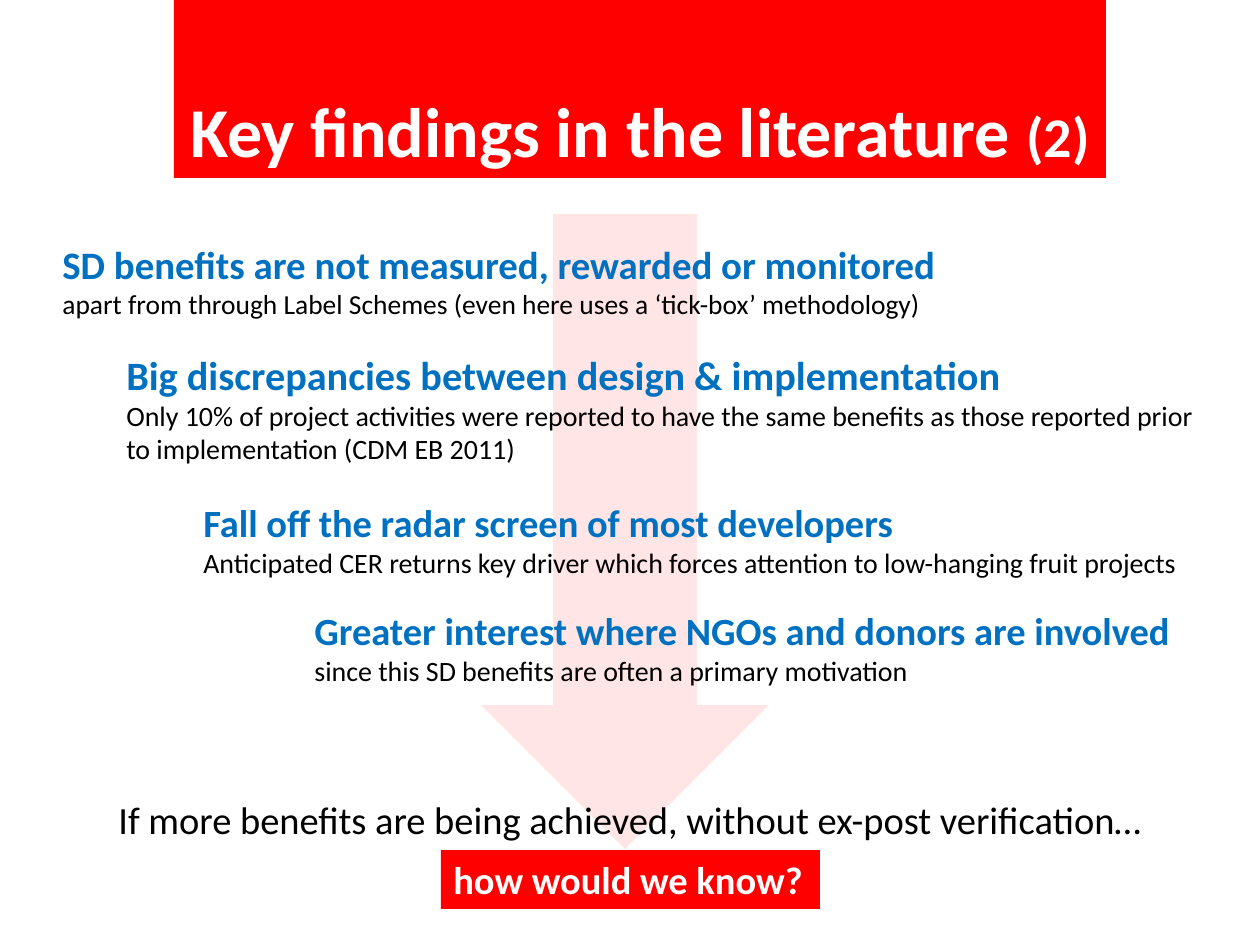
from lxml.etree import SubElement
from pptx import Presentation
from pptx.dml.color import RGBColor
from pptx.enum.shapes import MSO_SHAPE as Shape
from pptx.enum.text import MSO_ANCHOR as Anchor, PP_ALIGN as Align
from pptx.oxml.ns import qn
from pptx.util import Pt

EMU_PER_PX = 914400 // 126
RED = RGBColor(0xFF, 0x00, 0x00)
BLUE = RGBColor(0x00, 0x70, 0xC0)
WHITE = RGBColor(0xFF, 0xFF, 0xFF)
BLACK = RGBColor(0x00, 0x00, 0x00)

TITLE = [("Key findings in the literature ", 40), ("(2)", 32)]
TITLE_BOX = (174, -4, 932, 182)
ARROW_BOX = (481, 214, 288, 635)
ARROW_OPACITY = 10

# heading, size, detail, size, box, left indent
FINDINGS = [
    ("SD benefits are not measured, rewarded or monitored", 22.2,
     "apart from through Label Schemes (even here uses a ‘tick-box’ methodology)", 15.7,
     (-74, 234, 1091, 110), 124),
    ("Big discrepancies between design & implementation", 23,
     "Only 10% of project activities were reported to have the same benefits "
     "as those reported prior to implementation (CDM EB 2011)", 16,
     (65, 344, 1160, 129), 49),
    ("Fall off the radar screen of most developers", 22,
     "Anticipated CER returns key driver which forces attention "
     "to low-hanging fruit projects", 16,
     (144, 493, 1091, 118), 47),
    ("Greater interest where NGOs and donors are involved", 22,
     "since this SD benefits are often a primary motivation", 16,
     (302, 601, 912, 93), 0),
]
CONCLUSION = "If more benefits are being achieved, without ex-post verification…"
CONCLUSION_BOX = (104, 790, 1052, 59)
QUESTION = "how would we know?"
QUESTION_BOX = (441, 850, 379, 59)


def px(*lengths):
    return [length * EMU_PER_PX for length in lengths]


def add_run(paragraph, text, size, color, bold=False):
    run = paragraph.add_run()
    run.text = text
    font_format = {"name": "Calibri", "size": Pt(size), "bold": bold}
    for name, value in font_format.items():
        setattr(run.font, name, value)
    run.font.color.rgb = color


def add_red_shape(slide, preset, box):
    shape = slide.shapes.add_shape(preset, *px(*box))
    shape.shadow.inherit = False
    shape.fill.solid()
    shape.fill.fore_color.rgb = RED
    shape.line.fill.background()
    return shape


def add_text_frame(slide, box):
    frame = slide.shapes.add_textbox(*px(*box)).text_frame
    frame.word_wrap = True
    return frame


def add_finding(slide, heading, heading_size, detail, detail_size, box, indent):
    frame = add_text_frame(slide, box)
    heading_line, detail_line = frame.paragraphs[0], frame.add_paragraph()
    for line in (heading_line, detail_line):
        line._p.get_or_add_pPr().set("marL", str(indent * EMU_PER_PX))
    add_run(heading_line, heading, heading_size, BLUE, bold=True)
    add_run(detail_line, detail, detail_size, BLACK)


def main():
    deck = Presentation()
    deck.slide_width, deck.slide_height = px(1260, 945)
    slide = deck.slides.add_slide(deck.slide_layouts[6])

    title = add_red_shape(slide, Shape.RECTANGLE, TITLE_BOX).text_frame
    title.vertical_anchor = Anchor.BOTTOM
    title.paragraphs[0].alignment = Align.CENTER
    for text, size in TITLE:
        add_run(title.paragraphs[0], text, size, WHITE, bold=True)

    arrow = add_red_shape(slide, Shape.DOWN_ARROW, ARROW_BOX)
    arrow_color = arrow._element.spPr.find(qn("a:solidFill"))[0]
    SubElement(arrow_color, qn("a:alpha")).set("val", str(ARROW_OPACITY * 1000))

    for finding in FINDINGS:
        add_finding(slide, *finding)

    conclusion = add_text_frame(slide, CONCLUSION_BOX).paragraphs[0]
    conclusion.alignment = Align.CENTER
    conclusion.space_after = Pt(10)
    add_run(conclusion, CONCLUSION, 22, BLACK)

    question = add_red_shape(slide, Shape.RECTANGLE, QUESTION_BOX).text_frame
    question.word_wrap = False
    question.vertical_anchor = Anchor.TOP
    question.paragraphs[0].alignment = Align.LEFT
    add_run(question.paragraphs[0], QUESTION, 22, WHITE, bold=True)

    deck.save("out.pptx")


if __name__ == "__main__":
    main()
